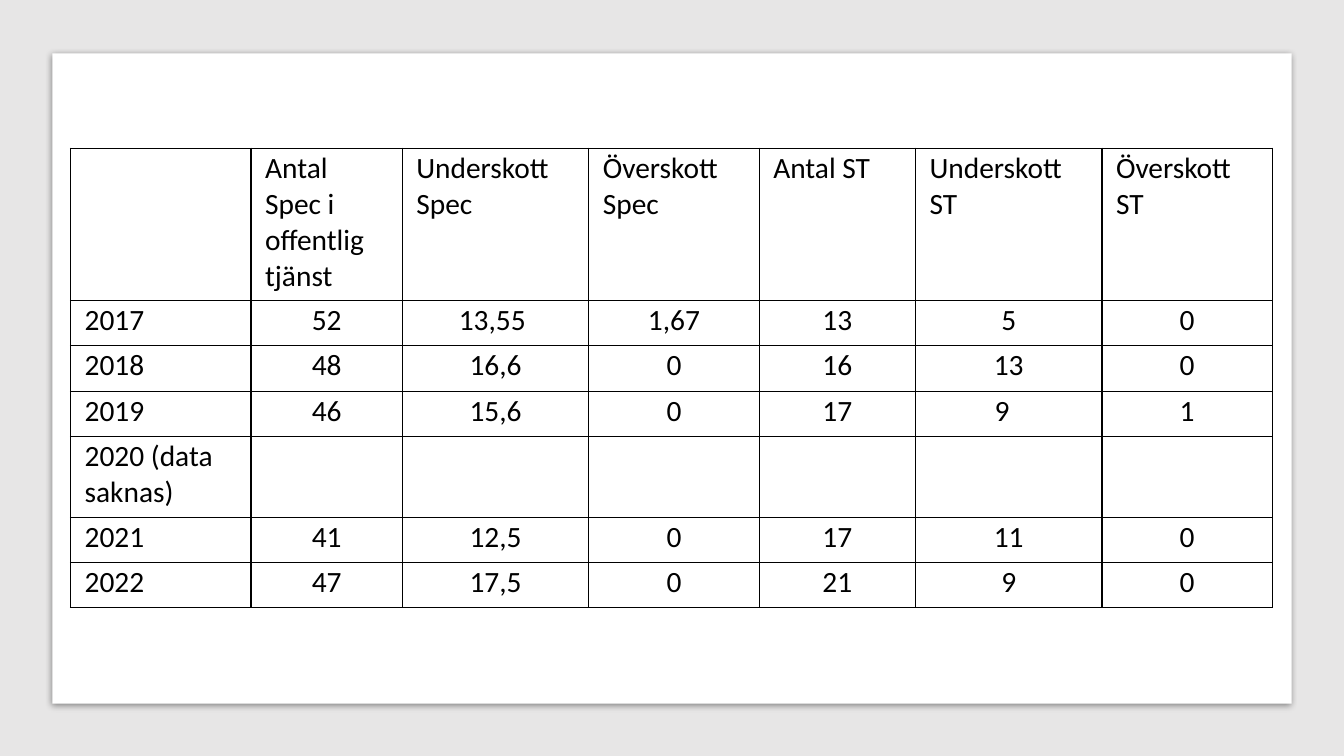
from lxml import etree
from pptx import Presentation
from pptx.dml.color import RGBColor
from pptx.enum.shapes import MSO_SHAPE
from pptx.enum.text import PP_ALIGN
from pptx.oxml import parse_xml
from pptx.oxml.ns import nsdecls, qn
from pptx.util import Inches, Pt

BLACK = RGBColor(0x00, 0x00, 0x00)
WHITE = RGBColor(0xFF, 0xFF, 0xFF)
GREY = RGBColor(0xE7, 0xE6, 0xE6)

SLIDE_WIDTH, SLIDE_HEIGHT = 13.33, 7.5
FONT_NAME, FONT_SIZE = "Calibri", 21
COLUMN_WIDTHS = [1.79, 1.5, 1.85, 1.69, 1.55, 1.85, 1.69]
ROW_HEIGHTS = [1.51, 0.45, 0.45, 0.45, 0.8, 0.45, 0.45]
ROWS = [
    ["", "Antal Spec i offentlig tjänst", "Underskott\nSpec", "Överskott\nSpec",
     "Antal ST", "Underskott\nST", "Överskott\nST"],
    ["2017", "52", "13,55 ", "1,67", "13", "5", "0"],
    ["2018", "48", "16,6", "0", "16", "13", "0"],
    ["2019", "46", "15,6", "0", "17", "9  ", "1"],
    ["2020 (data saknas)", "", "", "", "", "", ""],
    ["2021", "41", "12,5", "0", "17", "11", "0"],
    ["2022", "47", "17,5", "0", "21", "9", "0"],
]


def add_panel(slide, left, top, width, height, color):
    panel = slide.shapes.add_shape(
        MSO_SHAPE.RECTANGLE, Inches(left), Inches(top), Inches(width), Inches(height))
    panel.shadow.inherit = False
    panel.fill.solid()
    panel.fill.fore_color.rgb = color
    panel.line.fill.background()
    return panel


def add_soft_shadow(shape):
    effects = shape.element.spPr.find(qn("a:effectLst"))
    effects.append(parse_xml(
        f'<a:outerShdw {nsdecls("a")} blurRad="{Pt(5)}" dist="{Pt(1.4)}" '
        f'dir="5400000" algn="t" rotWithShape="0"><a:srgbClr val="{BLACK}">'
        '<a:alpha val="43000"/></a:srgbClr></a:outerShdw>'))


def set_borders(cell):
    properties = cell._tc.get_or_add_tcPr()
    for index, side in enumerate(("lnL", "lnR", "lnT", "lnB")):
        line = etree.Element(qn(f"a:{side}"), w=str(Pt(1)))
        fill = etree.SubElement(line, qn("a:solidFill"))
        etree.SubElement(fill, qn("a:srgbClr"), val=str(BLACK))
        properties.insert(index, line)


def write_cell(cell, text, alignment):
    cell.margin_left = cell.margin_right = Inches(0.14)
    cell.margin_top, cell.margin_bottom = Inches(0.02), 0
    for index, line in enumerate(text.split("\n")):
        frame = cell.text_frame
        paragraph = frame.add_paragraph() if index else frame.paragraphs[0]
        paragraph.alignment = alignment
        run = paragraph.add_run()
        run.text = line
        run.font.name = FONT_NAME
        run.font.size = Pt(FONT_SIZE)
        run.font.color.rgb = BLACK


def add_specialist_table(slide, left, top):
    table = slide.shapes.add_table(
        len(ROW_HEIGHTS), len(COLUMN_WIDTHS), Inches(left), Inches(top),
        Inches(sum(COLUMN_WIDTHS)), Inches(sum(ROW_HEIGHTS))).table
    table.first_row = table.horz_banding = False
    for column, width in zip(table.columns, COLUMN_WIDTHS):
        column.width = Inches(width)
    for row_index, (row, height, texts) in enumerate(zip(table.rows, ROW_HEIGHTS, ROWS)):
        row.height = Inches(height)
        for column_index, (cell, text) in enumerate(zip(row.cells, texts)):
            cell.fill.background()
            set_borders(cell)
            if text:
                is_value = row_index > 0 and column_index > 0
                write_cell(cell, text, PP_ALIGN.CENTER if is_value else PP_ALIGN.LEFT)


def main():
    presentation = Presentation()
    presentation.slide_width = Inches(SLIDE_WIDTH)
    presentation.slide_height = Inches(SLIDE_HEIGHT)
    slide = presentation.slides.add_slide(presentation.slide_layouts[6])
    add_panel(slide, 0, 0, SLIDE_WIDTH, SLIDE_HEIGHT, GREY)
    card = add_panel(slide, 0.52, 0.53, 12.29, 6.45, WHITE)
    add_soft_shadow(card)
    add_specialist_table(slide, 0.7, 1.47)
    presentation.save("out.pptx")


if __name__ == "__main__":
    main()
